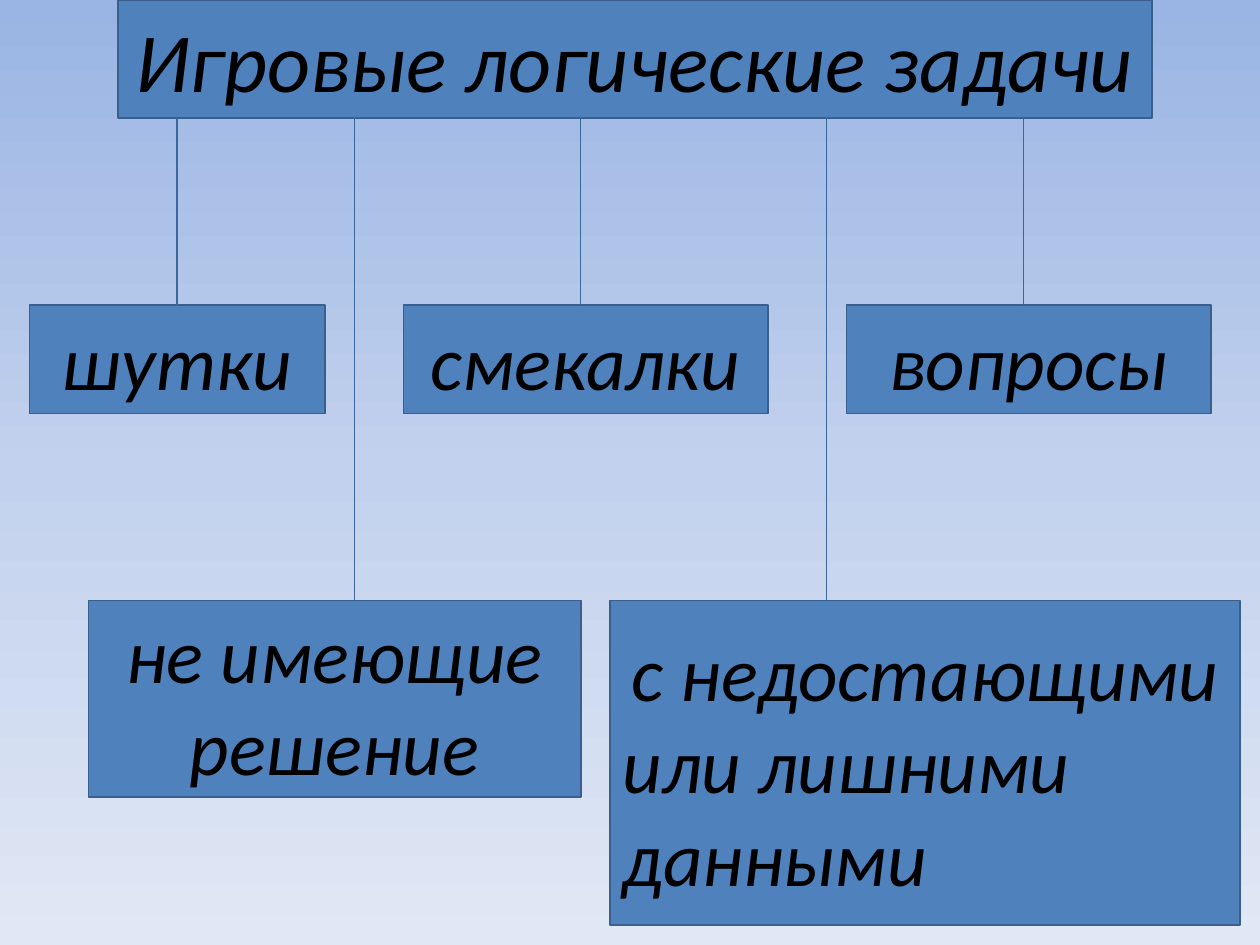
from dataclasses import dataclass

from lxml.etree import SubElement
from pptx import Presentation
from pptx.dml.color import RGBColor
from pptx.enum.shapes import MSO_CONNECTOR as CONN, MSO_SHAPE as SHAPE
from pptx.enum.text import MSO_ANCHOR as ANCHOR, MSO_AUTO_SIZE as AUTO, PP_ALIGN as ALIGN
from pptx.oxml.ns import qn
from pptx.util import Inches, Pt

TITLE_ONLY = 5
TOP, LEFT, BOTTOM, RIGHT = range(4)


@dataclass(frozen=True)
class Theme:
    font: str = "Calibri"
    text: str = "000000"
    box: str = "4F81BD"
    border: str = "3A5F8C"
    branch: str = "3B679C"
    sky: tuple = ((0, "9AB5E4"), (50, "C2D1ED"), (100, "E1E8F5"))
    title_size: int = 48
    box_size: int = 44


def rgb(value):
    return RGBColor.from_string(value)


def write(p, text, theme, size, align=ALIGN.CENTER, indent=0):
    """Fill a paragraph; indent (inches) moves its first line."""
    p.alignment = align
    if indent:
        p._p.get_or_add_pPr().set("indent", str(Inches(indent)))
    r = p.add_run()
    r.text = text
    r.font.name, r.font.size, r.font.italic = theme.font, Pt(size), True
    r.font.color.rgb = rgb(theme.text)


class Diagram:
    """A slide on a grid of 128 columns by 96 rows."""

    COLS, ROWS = 128, 96

    def __init__(self, prs, theme):
        self.prs, self.theme = prs, theme
        self.s = prs.slides.add_slide(prs.slide_layouts[TITLE_ONLY])

    def x(self, col):
        return round(self.prs.slide_width * col / self.COLS)

    def y(self, row):
        return round(self.prs.slide_height * row / self.ROWS)

    def background(self):
        fill = self.s.background.fill
        fill.gradient()
        fill.gradient_angle = 270
        stops = self.s._element.find(".//" + qn("a:gsLst"))
        for stop in list(stops):
            stops.remove(stop)
        for pos, color in self.theme.sky:
            stop = SubElement(stops, qn("a:gs"), pos=str(pos * 1000))
            SubElement(stop, qn("a:srgbClr"), val=color)

    def paint(self, sp):
        sp.fill.solid()
        sp.fill.fore_color.rgb = rgb(self.theme.box)
        sp.line.color.rgb = rgb(self.theme.border)
        sp.line.width = Pt(1)
        tf = sp.text_frame
        tf.vertical_anchor = ANCHOR.MIDDLE
        tf.auto_size = AUTO.NONE
        return tf

    def title(self, text, col, row, cols, rows):
        sp = self.s.shapes.title
        sp.left, sp.top = self.x(col), self.y(row)
        sp.width, sp.height = self.x(cols), self.y(rows)
        tf = self.paint(sp)
        tf.word_wrap = False
        write(tf.paragraphs[0], text, self.theme, self.theme.title_size)

    def box(self, lines, col, row, cols, rows):
        """Draw a box; each line is a text and its paragraph format."""
        sp = self.s.shapes.add_shape(
            SHAPE.RECTANGLE, self.x(col), self.y(row), self.x(cols), self.y(rows))
        sp.shadow.inherit = False
        tf = self.paint(sp)
        tf.word_wrap = True
        for i, (text, style) in enumerate(lines):
            p = tf.add_paragraph() if i else tf.paragraphs[0]
            write(p, text, self.theme, self.theme.box_size, **style)
        return sp

    def branch(self, col, top, bottom, child=None):
        """Drop a vertical line, joined to the top of child if given."""
        line = self.s.shapes.add_connector(
            CONN.STRAIGHT, self.x(col), self.y(top), self.x(col), self.y(bottom))
        line.line.color.rgb = rgb(self.theme.branch)
        line.line.width = Pt(0.75)
        SubElement(line._element.spPr, qn("a:effectLst"))
        if child is not None:
            child_middle = child.left + child.width // 2
            if abs(child_middle - self.x(col)) < Inches(0.02):
                line.end_connect(child, TOP)


def main():
    prs = Presentation()
    prs.slide_width, prs.slide_height = Inches(10), Inches(7.5)
    diagram = Diagram(prs, Theme())
    diagram.background()

    title_rows, upper, lower = 12, 31, 61
    diagram.title("Игровые логические задачи", 12, 0, 105, title_rows)

    # lines, branch column, box column, row, columns, rows
    kinds = [
        ([("шутки", {})], 18, 3, upper, 30, 11),
        ([("смекалки", {})], 59, 41, upper, 37, 11),
        ([("вопросы", {})], 104, 86, upper, 37, 11),
        ([("не имеющие", {}), ("решение", {"indent": -0.28})],
         36, 9, lower, 50, 20),
        ([("с недостающими", {}), ("или лишними данными", {"align": ALIGN.LEFT})],
         84, 62, lower, 64, 33),
    ]
    for lines, branch_col, col, row, cols, rows in kinds:
        child = diagram.box(lines, col, row, cols, rows)
        diagram.branch(branch_col, title_rows, row, child)

    prs.save("out.pptx")


if __name__ == "__main__":
    main()
